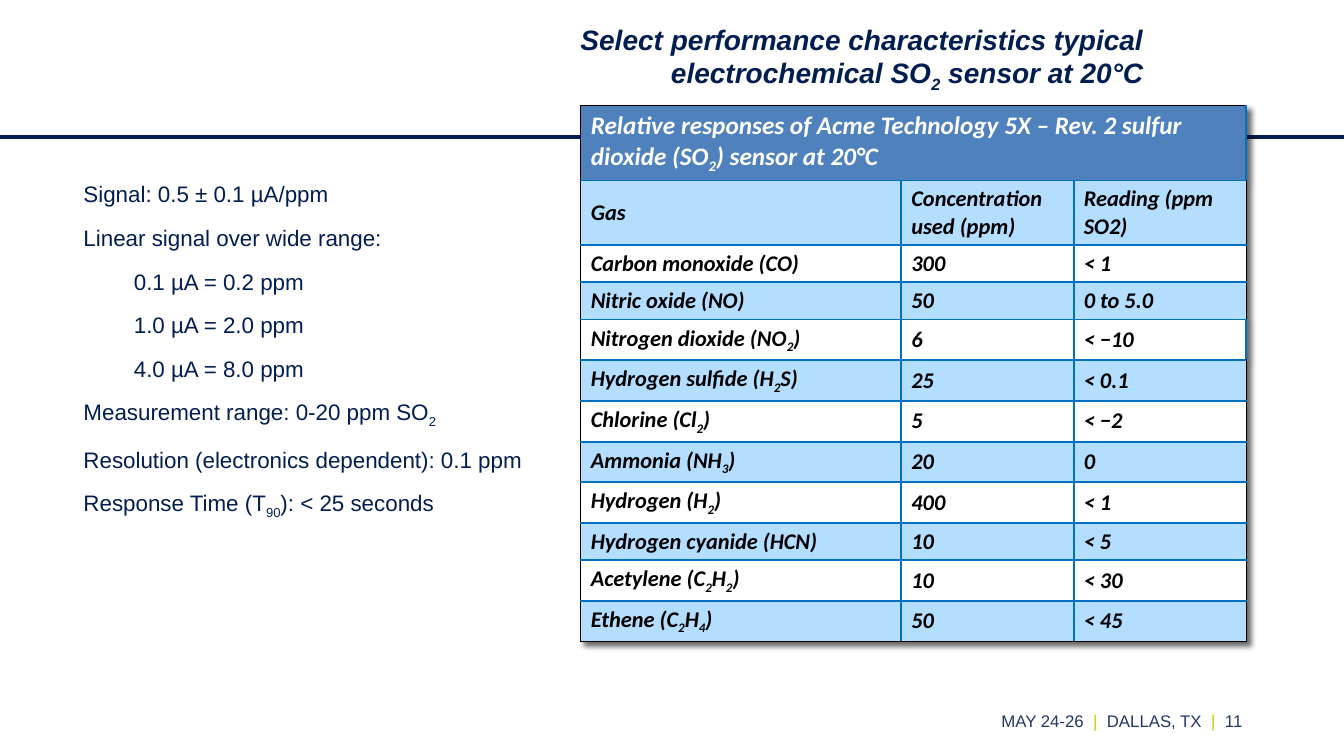
from lxml import etree
from pptx import Presentation
from pptx.dml.color import RGBColor
from pptx.enum.shapes import MSO_CONNECTOR
from pptx.enum.text import MSO_ANCHOR, PP_ALIGN
from pptx.oxml.ns import qn
from pptx.util import Inches, Pt

STRAIGHT = MSO_CONNECTOR.STRAIGHT
TOP, MIDDLE = MSO_ANCHOR.TOP, MSO_ANCHOR.MIDDLE
LEFT, RIGHT = PP_ALIGN.LEFT, PP_ALIGN.RIGHT

NAVY, FOOTER_NAVY, YELLOW = "021E51", "203864", "CCCC00"
BLACK, WHITE, BLUE = "000000", "FFFFFF", "0070C0"
BAND, HEADING = "B3DEFF", "4F81BD"

TITLE = "Select performance characteristics typical electrochemical SO_2_ sensor at 20°C"
TABLE_HEADING = "Relative responses of Acme Technology 5X – Rev. 2 sulfur dioxide (SO_2_) sensor at 20°C"
CHARACTERISTICS = [
    (0, "Signal: 0.5 ± 0.1 µA/ppm"),
    (0, "Linear signal over wide range:"),
    (1, "0.1 µA = 0.2 ppm"),
    (1, "1.0 µA = 2.0 ppm"),
    (1, "4.0 µA = 8.0 ppm"),
    (0, "Measurement range: 0-20 ppm SO_2_"),
    (0, "Resolution (electronics dependent): 0.1 ppm"),
    (0, "Response Time (T_90_): < 25 seconds"),
]
RESPONSES = [
    (TABLE_HEADING, "", ""),
    ("Gas", "Concentration used (ppm)", "Reading (ppm SO2)"),
    ("Carbon monoxide (CO)", "300", "< 1"),
    ("Nitric oxide (NO)", "50", "0 to 5.0"),
    ("Nitrogen dioxide (NO_2_)", "6", "< −10"),
    ("Hydrogen sulfide (H_2_S)", "25", "< 0.1"),
    ("Chlorine (Cl_2_)", "5", "< −2"),
    ("Ammonia (NH_3_)", "20", "0"),
    ("Hydrogen (H_2_)", "400", "< 1"),
    ("Hydrogen cyanide (HCN)", "10", "< 5"),
    ("Acetylene (C_2_H_2_)", "10", "< 30"),
    ("Ethene (C_2_H_4_)", "50", "< 45"),
]
COLUMN_WIDTHS = (3.18, 1.71, 1.71)
BLUE_RIGHT_ROWS = (0, 4)
FOOTER = [
    ("MAY 24-26  ", FOOTER_NAVY),
    ("|", YELLOW),
    ("  DALLAS, TX  ", FOOTER_NAVY),
    ("|  ", YELLOW),
    ("11", FOOTER_NAVY),
]


def color(value):
    return RGBColor.from_string(value)


def add_text(paragraph, text, size=16, fill=NAVY, name="Arial", bold=False, italic=False):
    for index, part in enumerate(text.split("_")):
        if not part:
            continue
        run = paragraph.add_run()
        run.text = part
        run.font.size = Pt(size)
        run.font.name = name
        run.font.bold = bold
        run.font.italic = italic
        run.font.color.rgb = color(fill)
        if index % 2:
            run._r.get_or_add_rPr().set("baseline", "-25000")


def add_fill(parent, value):
    solid = etree.SubElement(parent, qn("a:solidFill"))
    return etree.SubElement(solid, qn("a:srgbClr"), val=value)


def row_height(row, gas):
    if row < 2:
        return (0.74, 0.64)[row]
    return 0.4 if "_" in gas else 0.37


class SensorSlide:
    def __init__(self, presentation):
        self.slide = presentation.slides.add_slide(presentation.slide_layouts[6])
        self.shapes = self.slide.shapes

    def rule(self, y, width):
        line = self.shapes.add_connector(STRAIGHT, 0, Inches(y), Inches(width), Inches(y))
        line.line.color.rgb = color(NAVY)
        line.line.width = Pt(3)
        etree.SubElement(line._element.spPr, qn("a:effectLst"))

    def text_box(self, box, anchor=TOP, align=LEFT):
        frame = self.shapes.add_textbox(*map(Inches, box)).text_frame
        frame.word_wrap = True
        frame.vertical_anchor = anchor
        frame.paragraphs[0].alignment = align
        return frame

    def title(self, box, text):
        frame = self.text_box(box, MIDDLE, RIGHT)
        add_text(frame.paragraphs[0], text, size=20, bold=True, italic=True)

    def characteristics(self, box, items):
        frame = self.text_box(box)
        for index, (level, text) in enumerate(items):
            paragraph = frame.add_paragraph() if index else frame.paragraphs[0]
            if level:
                paragraph.level = level
                paragraph._p.get_or_add_pPr().set("marL", str(Inches(0.5)))
            paragraph.space_after = Pt(12)
            add_text(paragraph, text)

    def footer(self, box, parts):
        frame = self.text_box(box, MIDDLE, RIGHT)
        for text, fill in parts:
            add_text(frame.paragraphs[0], text, size=12, fill=fill)

    def borders(self, cell, outer):
        properties = cell._tc.get_or_add_tcPr()
        for side, is_outer in outer.items():
            width = Pt(1 if is_outer else 1.5)
            line = etree.SubElement(properties, qn("a:" + side), w=str(width))
            add_fill(line, BLACK if is_outer else BLUE)

    def table_shadow(self, table):
        effects = etree.SubElement(table._tbl.tblPr, qn("a:effectLst"))
        shadow = etree.SubElement(
            effects, qn("a:outerShdw"), blurRad=str(Pt(4)), dist=str(Pt(4)),
            dir="2700000", algn="tl", rotWithShape="0")
        shade = etree.SubElement(shadow, qn("a:srgbClr"), val=BLACK)
        etree.SubElement(shade, qn("a:alpha"), val="60000")

    def table(self, left, top, widths, rows):
        heights = [row_height(index, row[0]) for index, row in enumerate(rows)]
        table = self.shapes.add_table(
            len(rows), len(widths), Inches(left), Inches(top),
            Inches(sum(widths)), Inches(sum(heights))).table
        table.first_row = table.horz_banding = False
        self.table_shadow(table)
        for column, width in zip(table.columns, widths):
            column.width = Inches(width)
        table.cell(0, 0).merge(table.cell(0, len(widths) - 1))
        for row, (values, height) in enumerate(zip(rows, heights)):
            table.rows[row].height = Inches(height)
            for column, text in enumerate(values):
                cell = table.cell(row, column)
                self.borders(cell, {
                    "lnL": column == 0,
                    "lnR": column == len(widths) - 1 and row not in BLUE_RIGHT_ROWS,
                    "lnT": row == 0,
                    "lnB": row == len(rows) - 1,
                })
                cell.fill.solid()
                band = BAND if row % 2 else WHITE
                cell.fill.fore_color.rgb = color(band if row else HEADING)
                cell.vertical_anchor = MIDDLE
                add_text(cell.text_frame.paragraphs[0], text, size=16 if row else 18,
                         fill=BLACK if row else WHITE, name="Calibri", bold=True, italic=True)


def main():
    presentation = Presentation()
    presentation.slide_width = Inches(13.33)
    presentation.slide_height = Inches(7.5)
    slide = SensorSlide(presentation)
    slide.rule(1.36, 13.33)
    slide.title((5.3, 0.1, 6.14, 0.95), TITLE)
    slide.table(5.76, 1.05, COLUMN_WIDTHS, RESPONSES)
    slide.characteristics((0.73, 1.74, 6.67, 3.43), CHARACTERISTICS)
    slide.footer((9.42, 6.95, 3, 0.4), FOOTER)
    presentation.save("out.pptx")


if __name__ == "__main__":
    main()
